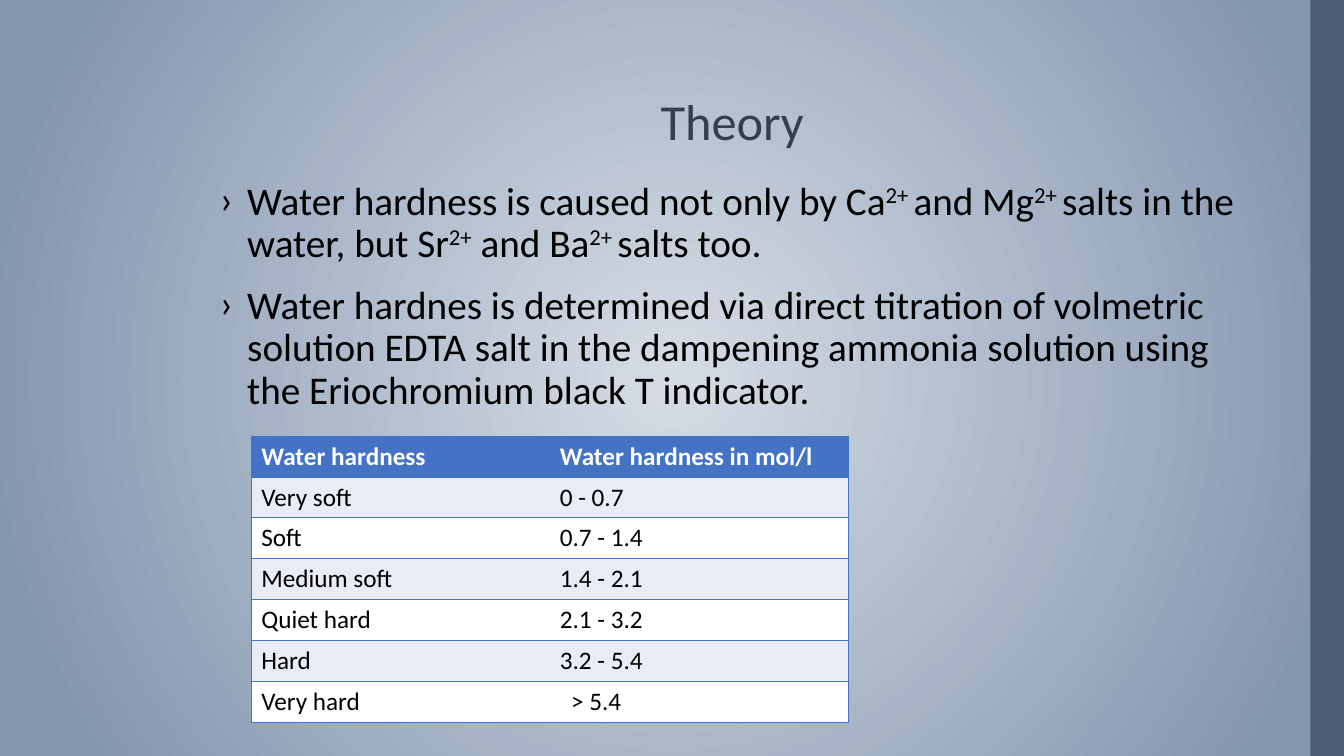
from dataclasses import dataclass

from pptx import Presentation
from pptx.dml.color import RGBColor
from pptx.enum.shapes import MSO_SHAPE
from pptx.enum.text import MSO_ANCHOR, PP_ALIGN
from pptx.oxml.ns import qn
from pptx.oxml.xmlchemy import OxmlElement
from pptx.slide import Slide
from pptx.table import _Cell as Cell
from pptx.text.text import _Paragraph as Paragraph, _Run as Run
from pptx.util import Pt

COLOURS = {
    "centre": "D6DCE5",
    "edge": "8497B0",
    "sidebar": "44546A",
    "title": "333F50",
    "text": "000000",
    "header": "4472C4",
    "band": "E9EBF5",
    "plain": "FFFFFF",
}
FONT = "Calibri"


@dataclass(frozen=True)
class Piece:
    text: str
    superscript: bool = False


@dataclass(frozen=True)
class Grade:
    name: str
    hardness: str
    indent: float = 0


BULLETS = [
    [
        Piece("Water hardness is caused not only by Ca"),
        Piece("2+ ", True),
        Piece("and Mg"),
        Piece("2+ ", True),
        Piece("salts in the water, but Sr"),
        Piece("2+", True),
        Piece(" and Ba"),
        Piece("2+ ", True),
        Piece("salts too."),
    ],
    [
        Piece(
            "Water hardnes is determined via direct titration of volmetric "
            "solution EDTA salt in the dampening ammonia solution using "
            "the Eriochromium black T indicator."
        )
    ],
]
GRADES = [
    Grade("Water hardness", "Water hardness in mol/l"),
    Grade("Very soft", "0 - 0.7"),
    Grade("Soft", "0.7 - 1.4"),
    Grade("Medium soft", "1.4 - 2.1"),
    Grade("Quiet hard", "2.1 - 3.2"),
    Grade("Hard", "3.2 - 5.4"),
    Grade("Very hard", "> 5.4", 8),
]


def colour(name: str) -> RGBColor:
    return RGBColor.from_string(COLOURS[name])


def format_run(span: Run, size: float, tint: str, bold: bool = False) -> None:
    span.font.name = FONT
    span.font.size = Pt(size)
    span.font.bold = bold
    span.font.color.rgb = colour(tint)


def paint_background(page: Slide) -> None:
    fill = page.background.fill
    fill.gradient()
    for stop, tint, position in zip(fill.gradient_stops, ("centre", "edge"), (0, 0.9)):
        stop.color.rgb = colour(tint)
        stop.position = position
    circle = OxmlElement("a:path")
    circle.set("path", "circle")
    focus = OxmlElement("a:fillToRect")
    for side in "ltrb":
        focus.set(side, "50000")
    circle.append(focus)
    linear = next(page.element.iter(qn("a:lin")))
    linear.getparent().replace(linear, circle)


def add_sidebar(page: Slide) -> None:
    sidebar = page.shapes.add_shape(MSO_SHAPE.RECTANGLE, Pt(936), 0, Pt(24), Pt(540))
    sidebar.shadow.inherit = False
    sidebar.line.fill.background()
    sidebar.fill.solid()
    sidebar.fill.fore_color.rgb = colour("sidebar")
    alpha = OxmlElement("a:alpha")
    alpha.set("val", "87000")
    next(sidebar.element.spPr.iter(qn("a:srgbClr"))).append(alpha)


def set_title(page: Slide) -> None:
    title = page.shapes.title
    title.left, title.top, title.width, title.height = Pt(150), Pt(14), Pt(746), Pt(97.5)
    title.text_frame.text = "Theory"
    title.text_frame.vertical_anchor = MSO_ANCHOR.BOTTOM
    para = title.text_frame.paragraphs[0]
    para.alignment = PP_ALIGN.CENTER
    para.line_spacing = 0.9
    format_run(para.runs[0], 36, "title")


def set_bullet(para: Paragraph) -> None:
    properties = para._p.get_or_add_pPr()
    properties.set("marL", str(Pt(19.5)))
    properties.set("indent", str(Pt(-19.5)))
    for tag, name, value in (("a:buFont", "typeface", FONT), ("a:buChar", "char", "›")):
        bullet = OxmlElement(tag)
        bullet.set(name, value)
        properties.append(bullet)


def add_body(page: Slide) -> None:
    box = page.shapes.add_textbox(Pt(150), Pt(126), Pt(746), Pt(360))
    frame = box.text_frame
    frame.word_wrap = True
    for index, pieces in enumerate(BULLETS):
        para = frame.add_paragraph() if index else frame.paragraphs[0]
        set_bullet(para)
        para.line_spacing = 0.9
        para.space_before = Pt(14 if index else 0)
        for piece in pieces:
            span = para.add_run()
            span.text = piece.text
            format_run(span, 28, "text")
            if piece.superscript:
                span._r.get_or_add_rPr().set("baseline", "30000")


def set_borders(cell: Cell, outer: str) -> None:
    properties = cell._tc.get_or_add_tcPr()
    for side in "LRTB":
        border = OxmlElement(f"a:ln{side}")
        border.set("w", str(Pt(1)))
        if side in outer + "TB":
            paint = OxmlElement("a:solidFill")
            tint = OxmlElement("a:srgbClr")
            tint.set("val", COLOURS["header"])
            paint.append(tint)
        else:
            paint = OxmlElement("a:noFill")
        border.append(paint)
        properties.append(border)


def add_hardness_table(page: Slide) -> None:
    row_height = 29.2
    frame = page.shapes.add_table(
        len(GRADES), 2, Pt(179.5), Pt(311.5), Pt(426.5), Pt(row_height * len(GRADES))
    )
    for row, grade in enumerate(GRADES):
        frame.table.rows[row].height = Pt(row_height)
        fill = "header" if row == 0 else "band" if row % 2 else "plain"
        for column, text in enumerate((grade.name, grade.hardness)):
            cell = frame.table.cell(row, column)
            set_borders(cell, "LR"[column])
            cell.fill.solid()
            cell.fill.fore_color.rgb = colour(fill)
            cell.text_frame.text = text
            para = cell.text_frame.paragraphs[0]
            if column and grade.indent:
                para._p.get_or_add_pPr().set("marL", str(Pt(grade.indent)))
            format_run(para.runs[0], 18, "text" if row else "plain", row == 0)


def main() -> None:
    deck = Presentation()
    deck.slide_width, deck.slide_height = Pt(960), Pt(540)
    page = deck.slides.add_slide(deck.slide_layouts[5])
    paint_background(page)
    add_sidebar(page)
    set_title(page)
    add_body(page)
    add_hardness_table(page)
    deck.save("out.pptx")


if __name__ == "__main__":
    main()
